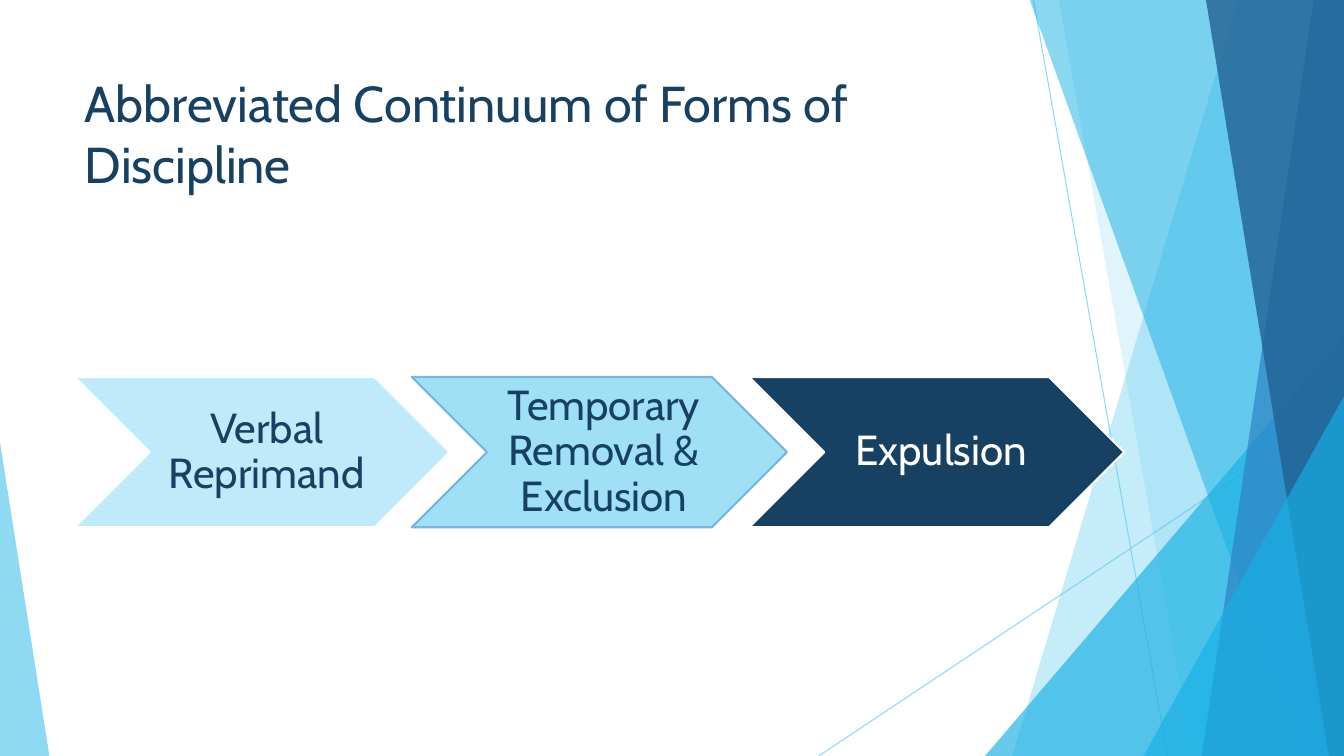
from pptx import Presentation
from pptx.dml.color import RGBColor
from pptx.enum.shapes import MSO_CONNECTOR, MSO_SHAPE
from pptx.enum.text import MSO_ANCHOR, MSO_AUTO_SIZE, PP_ALIGN
from pptx.oxml.ns import qn
from pptx.util import Inches, Pt
from lxml import etree

COLORS = {
    "sky": "5FCBEF", "cyan": "17B0E4", "blue": "2E83C3", "deep": "226292",
    "navy": "174162", "pale": "BFEAF9", "light": "9FE0F5", "edge": "7CB5E0",
    "white": "FFFFFF",
}
FONT = "Cabin"
WIDTH, HEIGHT = 13.33, 7.5


def tint(fill, color, alpha):
    """Make a fill solid in the named color, alpha percent opaque."""
    fill.solid()
    fill.fore_color.rgb = RGBColor.from_string(COLORS[color])
    for node in fill._xPr.iter(qn("a:srgbClr")):
        etree.SubElement(node, qn("a:alpha")).set("val", str(alpha * 1000))


def style(font, size, color):
    font.name = FONT
    font.size = Pt(size)
    font.color.rgb = RGBColor.from_string(COLORS[color])


prs = Presentation()
prs.slide_width, prs.slide_height = Inches(WIDTH), Inches(HEIGHT)
slide = prs.slides.add_slide(prs.slide_layouts[5])
shapes = slide.shapes

# Thin lines behind the facets
for ends in [(10.25, 0, 11.58, HEIGHT), (WIDTH, 4.03, 8.12, HEIGHT)]:
    line = shapes.add_connector(MSO_CONNECTOR.STRAIGHT, *map(Inches, ends))
    line.line.width = Pt(0.75)
    tint(line.line.fill, "sky", 70)
    etree.SubElement(line._element.spPr, qn("a:effectLst"))

# Facets: bands (top left, bottom left) reach the right edge;
# triangles (left, top, width, apex) stand on the bottom edge
facets = [
    ("band", (12.28, 10.04), "sky", 36),
    ("band", (10.5, 11.83), "sky", 20),
    ("triangle", (9.77, 3.33, 3.56, 1), "cyan", 66),
    ("band", (10.21, 12.91), "cyan", 50),
    ("band", (13.03, 11.92), "blue", 70),
    ("band", (11.96, 13.18), "deep", 80),
    ("triangle", (11.34, 3.93, 1.99, 1), "cyan", 66),
    ("triangle", (0, 4.39, 0.49, 0), "sky", 70),
]
for kind, place, color, alpha in facets:
    if kind == "band":
        top, foot = place
        pen = shapes.build_freeform(Inches(top), Inches(-0.01))
        corners = [(WIDTH, -0.01), (WIDTH, HEIGHT), (foot, HEIGHT)]
        pen.add_line_segments([(Inches(x), Inches(y)) for x, y in corners])
        facet = pen.convert_to_shape()
    else:
        left, top, width, apex = place
        facet = shapes.add_shape(
            MSO_SHAPE.ISOSCELES_TRIANGLE, Inches(left), Inches(top),
            Inches(width), Inches(HEIGHT - top))
        facet.adjustments[0] = apex
    facet.shadow.inherit = False
    tint(facet.fill, color, alpha)
    facet.line.fill.background()

# Title
title = shapes.title
title.left, title.top = Inches(0.74), Inches(0.67)
title.width, title.height = Inches(9.4), Inches(1.44)
frame = title.text_frame
frame.text = "Abbreviated Continuum of Forms of Discipline"
frame.word_wrap = True
frame.auto_size = MSO_AUTO_SIZE.NONE
frame.vertical_anchor = MSO_ANCHOR.TOP
frame.paragraphs[0].alignment = PP_ALIGN.LEFT
style(frame.paragraphs[0].font, 36, "navy")

# Chevron steps
steps = [
    ("Verbal Reprimand", "pale", "white", "navy"),
    ("Temporary Removal & Exclusion", "light", "edge", "navy"),
    ("Expulsion", "navy", "white", "white"),
]
for i, (text, fill, edge, ink) in enumerate(steps):
    step = shapes.add_shape(
        MSO_SHAPE.CHEVRON, Inches(0.74 + 3.345 * i), Inches(3.74),
        Inches(3.72), Inches(1.49))
    step.shadow.inherit = False
    step.fill.solid()
    step.fill.fore_color.rgb = RGBColor.from_string(COLORS[fill])
    step.line.color.rgb = RGBColor.from_string(COLORS[edge])
    step.line.width = Pt(1.5)
    frame = step.text_frame
    frame.text = text
    frame.word_wrap = True
    frame.vertical_anchor = MSO_ANCHOR.MIDDLE
    frame.margin_left = Inches(0.13)
    frame.margin_right = frame.margin_top = frame.margin_bottom = Inches(0.04)
    para = frame.paragraphs[0]
    para.alignment = PP_ALIGN.CENTER
    para.line_spacing = 0.9
    style(para.font, 30, ink)

prs.save("out.pptx")
